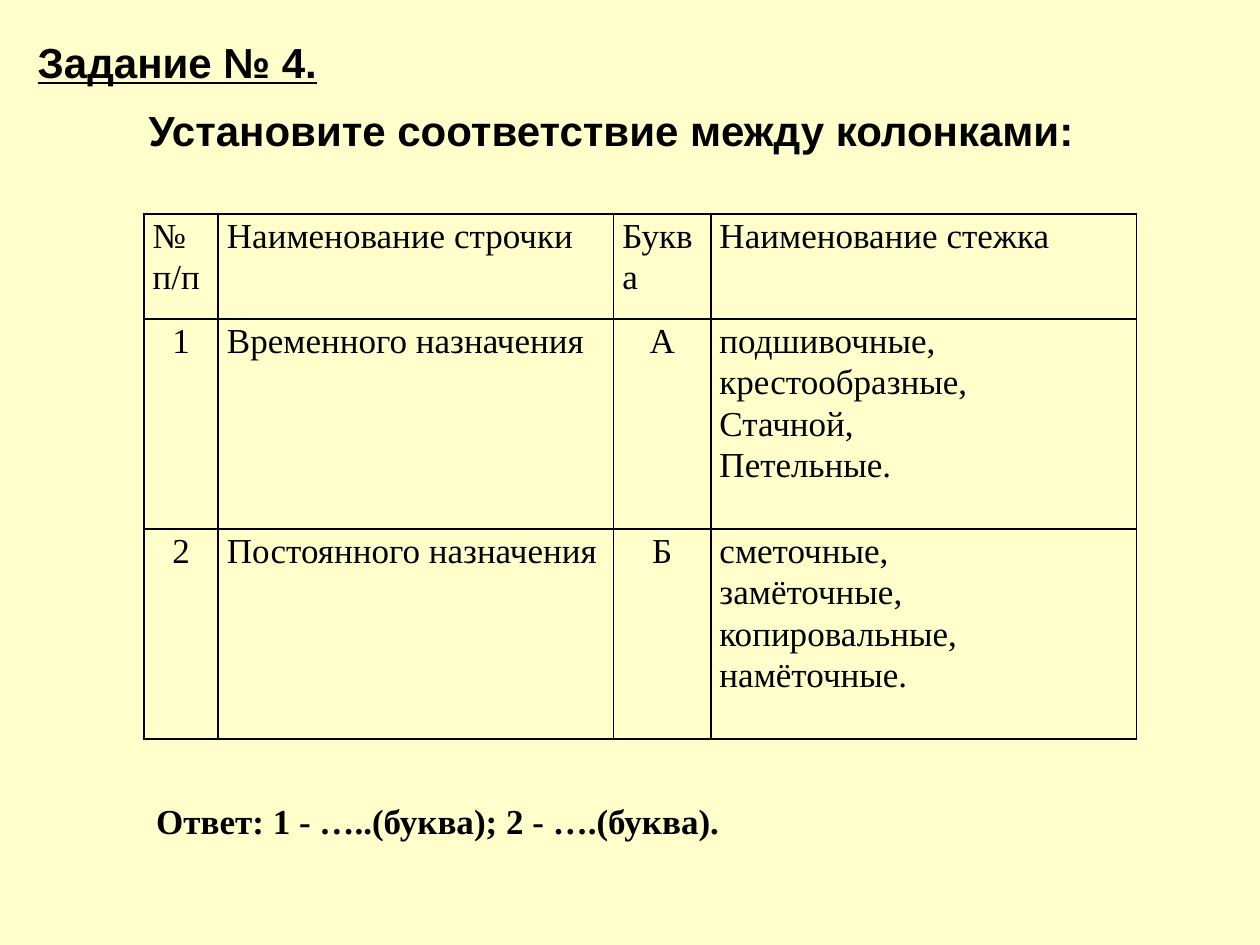
from lxml import etree
from pptx import Presentation
from pptx.dml.color import RGBColor
from pptx.enum.text import MSO_AUTO_SIZE, PP_ALIGN
from pptx.oxml.ns import qn
from pptx.util import Pt

LEFT, CENTER = PP_ALIGN.LEFT, PP_ALIGN.CENTER
GROW = MSO_AUTO_SIZE.SHAPE_TO_FIT_TEXT
COLORS = {"page": "FFFFCC", "ink": "000000"}
SERIF, SANS = "Times New Roman", "Arial"
COLS = [42.5, 226, 55.5, 243.4]
ROWS = [60, 120, 120]
CELLS = [
    ["№ п/п", "Наименование строчки", "Буква", "Наименование стежка"],
    ["1", "Временного назначения", "А",
     "подшивочные,\nкрестообразные,\nСтачной,\nПетельные."],
    ["2", "Постоянного назначения", "Б",
     "сметочные,\nзамёточные,\nкопировальные,\nнамёточные."],
]


def write(para, text, size=20, face=SERIF, bold=False, under=False,
          align=LEFT, after=0):
    """Put formatted text into a paragraph."""
    para.alignment = align
    para.line_spacing = 1.07
    para.space_after = Pt(after)
    run = para.add_run()
    run.text = text
    font = run.font
    font.size, font.name = Pt(size), face
    font.bold, font.underline = bold, under
    font.color.rgb = RGBColor.from_string(COLORS["ink"])


def add_box(slide, left, top, width, height, wrap=True):
    """Add a text box and return its text frame."""
    box = slide.shapes.add_textbox(Pt(left), Pt(top), Pt(width), Pt(height))
    frame = box.text_frame
    frame.word_wrap = wrap
    frame.auto_size = GROW
    return frame


def add_edges(cell):
    """Draw a thin line on all four sides of a cell."""
    props = cell._tc.get_or_add_tcPr()
    for spot, side in enumerate(("a:lnL", "a:lnR", "a:lnT", "a:lnB")):
        line = etree.Element(qn(side), w=str(Pt(1)))
        fill = etree.SubElement(line, qn("a:solidFill"))
        etree.SubElement(fill, qn("a:srgbClr"), val=COLORS["ink"])
        props.insert(spot, line)


def fill_cell(cell, text, align):
    """Write the lines of a cell and style it."""
    cell.margin_left = cell.margin_right = Pt(5)
    cell.margin_top = cell.margin_bottom = 0
    cell.fill.background()
    add_edges(cell)
    frame = cell.text_frame
    for i, line in enumerate(text.split("\n")):
        para = frame.add_paragraph() if i else frame.paragraphs[0]
        write(para, line, align=align)


def add_grid(slide, left, top):
    """Add the matching table."""
    shape = slide.shapes.add_table(len(ROWS), len(COLS), Pt(left), Pt(top),
                                   Pt(sum(COLS)), Pt(sum(ROWS)))
    table = shape.table
    table.first_row = table.horz_banding = False
    for col, width in zip(table.columns, COLS):
        col.width = Pt(width)
    for r, (row, height) in enumerate(zip(table.rows, ROWS)):
        row.height = Pt(height)
        for c, text in enumerate(CELLS[r]):
            key = r > 0 and c % 2 == 0
            fill_cell(table.cell(r, c), text, CENTER if key else LEFT)


def main():
    """Build the slide and save it."""
    deck = Presentation()
    deck.slide_width, deck.slide_height = Pt(720), Pt(540)
    slide = deck.slides.add_slide(deck.slide_layouts[6])
    back = slide.background.fill
    back.solid()
    back.fore_color.rgb = RGBColor.from_string(COLORS["page"])

    head = add_box(slide, 14.4, 15.1, 663, 77.8)
    style = {"size": 24, "face": SANS, "bold": True, "after": 8}
    write(head.paragraphs[0], "Задание № 4.", under=True, **style)
    write(head.add_paragraph(), " Установите соответствие между колонками:",
          align=CENTER, **style)

    add_grid(slide, 82.2, 122.4)

    reply = add_box(slide, 82.2, 451.4, 338.4, 31.7, wrap=False)
    write(reply.paragraphs[0], "Ответ: 1 - …..(буква); 2 - ….(буква).",
          bold=True, after=8)
    deck.save("out.pptx")


if __name__ == "__main__":
    main()
